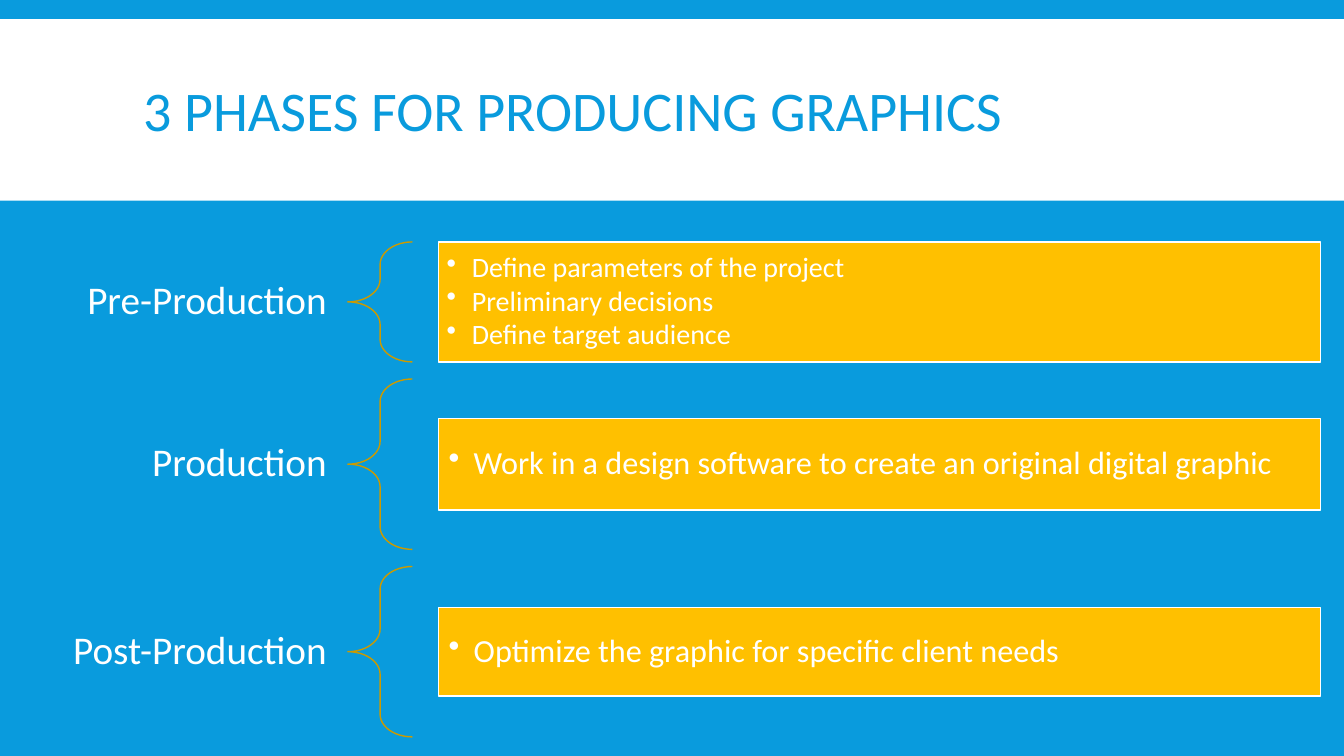
"""Build a slide showing the three phases for producing graphics."""
from lxml import etree
from pptx import Presentation
from pptx import util as u
from pptx.dml.color import RGBColor
from pptx.enum import shapes, text
from pptx.oxml.ns import qn

TITLE = "3 PHASES FOR PRODUCING GRAPHICS"
PHASES = [
    {"name": "Pre-Production", "row": 1.19, "box": 1.19, "size": 20, "inset": 0.08,
     "steps": ["Define parameters of the project", "Preliminary decisions",
               "Define target audience"]},
    {"name": "Production", "row": 1.69, "box": 0.91, "size": 23, "inset": 0.1,
     "steps": ["Work in a design software to create an original digital graphic"]},
    {"name": "Post-Production", "row": 1.69, "box": 0.88, "size": 23, "inset": 0.1,
     "steps": ["Optimize the graphic for specific client needs"]},
]
COLORS = {"blue": "099BDD", "white": "FFFFFF", "gold": "FFC000", "brace": "CC9A00"}
FONT = "Calibri"
WIDTH, HEIGHT = 13.33, 7.5
FIRST_ROW, ROW_GAP = 2.4, 0.17
NAME_COLUMN, BRACE_COLUMN, STEPS_COLUMN = (0.24, 3.22), (3.45, 0.64), (4.35, 8.75)
NAME_HEIGHT = 0.93


def color(name):
    return RGBColor.from_string(COLORS[name])


def place(column, middle, height):
    left, width = column
    return [u.Inches(value) for value in (left, middle - height / 2, width, height)]


def add_shape(slide, kind, frame, fill=None, line=None):
    shape = slide.shapes.add_shape(kind, *frame)
    shape.shadow.inherit = False
    if fill:
        shape.fill.solid()
        shape.fill.fore_color.rgb = color(fill)
    else:
        shape.fill.background()
    if line:
        shape.line.color.rgb = color(line)
        shape.line.width = u.Pt(1)
    else:
        shape.line.fill.background()
    return shape


def write(shape, lines, size, ink, align, spacing, side, edge, after=0):
    frame = shape.text_frame
    frame.text = "\n".join(lines)
    frame.word_wrap = True
    frame.auto_size = text.MSO_AUTO_SIZE.NONE
    frame.vertical_anchor = text.MSO_ANCHOR.MIDDLE
    frame.margin_left = frame.margin_right = u.Inches(side)
    frame.margin_top = frame.margin_bottom = u.Inches(edge)
    for para in frame.paragraphs:
        para.alignment = align
        para.line_spacing = spacing
        para.space_after = u.Pt(after)
        for span in para.runs:
            span.font.name = FONT
            span.font.size = u.Pt(size)
            span.font.color.rgb = color(ink)
    return frame.paragraphs


def add_bullet(para):
    para.level = 1
    properties = para._p.get_or_add_pPr()
    properties.set("marL", str(u.Inches(0.25)))
    properties.set("indent", str(-u.Inches(0.25)))
    etree.SubElement(properties, qn("a:buChar")).set("char", "•")


def add_title(slide):
    band = add_shape(slide, shapes.MSO_SHAPE.RECTANGLE,
                     place((0, WIDTH), 1.09, 1.8), "white")
    title = slide.shapes.title
    title._element.addprevious(band._element)
    title.left, title.top, title.width, title.height = place((1.32, 10.7), 1.13, 1.65)
    write(title, [TITLE], 40, "blue", text.PP_ALIGN.LEFT, 0.85, 0.1, 0.05)


def add_phase(slide, phase, middle):
    name = slide.shapes.add_textbox(*place(NAME_COLUMN, middle, NAME_HEIGHT))
    write(name, [phase["name"]], 28, "white", text.PP_ALIGN.RIGHT, 0.9, 0.22, 0.08)
    brace = add_shape(slide, shapes.MSO_SHAPE.LEFT_BRACE,
                      place(BRACE_COLUMN, middle, phase["row"]), line="brace")
    brace.adjustments[0] = 0.35
    steps = add_shape(slide, shapes.MSO_SHAPE.RECTANGLE,
                      place(STEPS_COLUMN, middle, phase["box"]), "gold", "white")
    paragraphs = write(steps, phase["steps"], phase["size"], "white", text.PP_ALIGN.LEFT,
                       0.9, phase["inset"], phase["inset"], 0.13 * phase["size"])
    for para in paragraphs:
        add_bullet(para)


def main():
    deck = Presentation()
    deck.slide_width, deck.slide_height = u.Inches(WIDTH), u.Inches(HEIGHT)
    slide = deck.slides.add_slide(deck.slide_layouts[5])
    slide.background.fill.solid()
    slide.background.fill.fore_color.rgb = color("blue")
    add_title(slide)
    top = FIRST_ROW
    for phase in PHASES:
        add_phase(slide, phase, top + phase["row"] / 2)
        top += phase["row"] + ROW_GAP
    deck.save("out.pptx")


if __name__ == "__main__":
    main()
